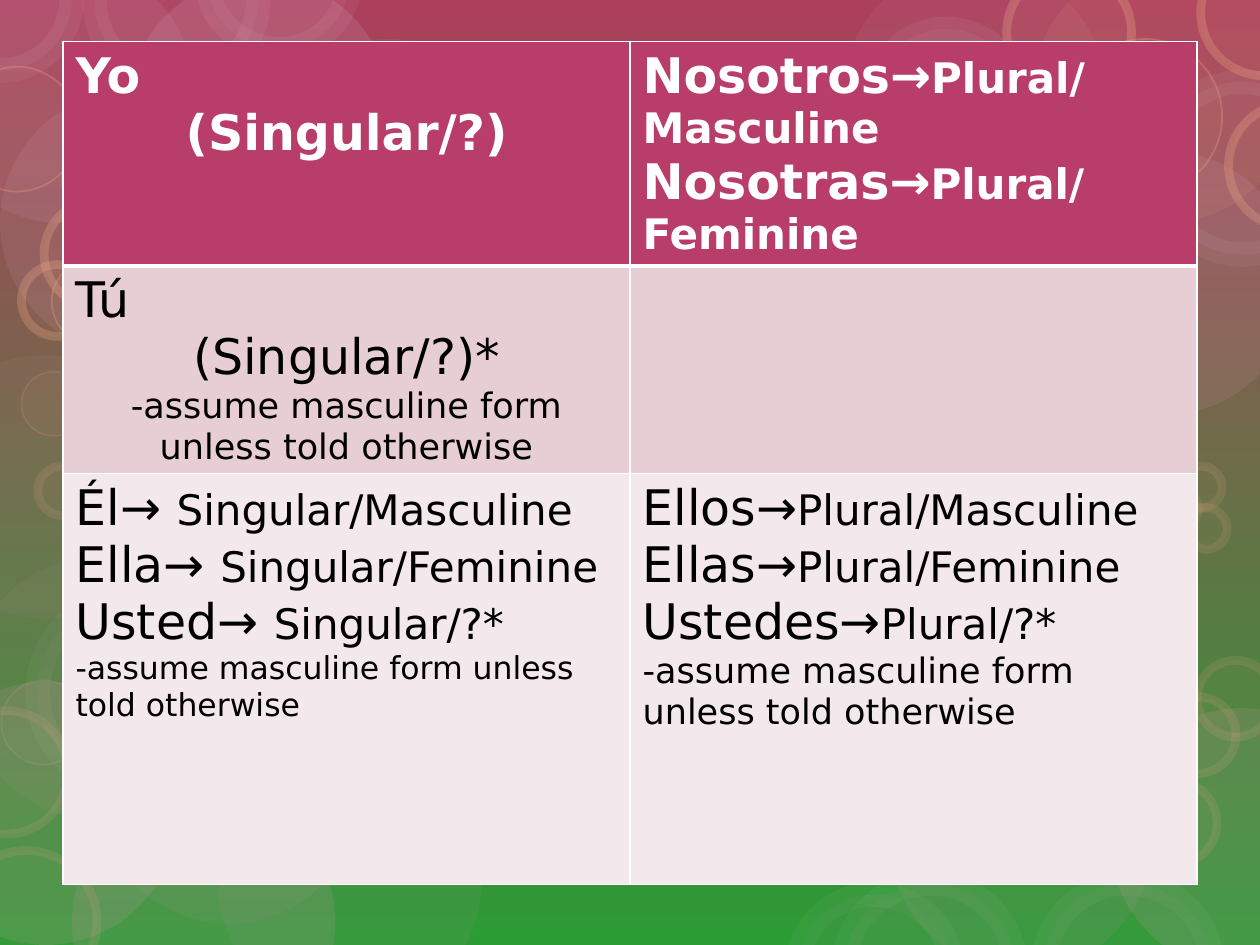
from lxml.etree import SubElement
from pptx import Presentation
from pptx.dml.color import RGBColor
from pptx.enum.shapes import MSO_SHAPE
from pptx.enum.text import PP_ALIGN
from pptx.oxml.ns import qn
from pptx.util import Inches, Pt

COLORS = {
    "sky": "AC3F5C", "ground": "2B9B34", "rose": "CF96B0", "peach": "EBA786",
    "pale": "F8F1F4", "header": "B83D68", "band": "E6CED4", "light": "F3E8EB",
    "white": "FFFFFF", "black": "000000",
}
SLIDE_W, SLIDE_H = 10, 7.5
BIG = 2.09

# Bubbles: fill, fill opacity, outline (colour, points, opacity), then
# circles as left, top, diameter; some run over the slide edge
BUBBLES = [
    ("rose", 8, None, [(-0.26, 4.42, BIG), (0.77, 5.24, BIG), (1.73, 5.96, BIG), (-0.69, 2.82, BIG)]),
    ("rose", 10, None, [(0.57, 1.2, BIG), (2.05, 0.31, BIG), (6.69, -0.29, BIG), (7.06, 5.62, BIG),
                        (6.75, 2.62, 1.33)]),
    ("rose", 16, None, [(0.57, 6.27, BIG), (8.81, 5.62, BIG), (-0.68, 5.41, BIG)]),
    ("rose", 14, None, [(-0.55, -0.32, BIG)]),
    ("rose", 20, None, [(1.01, -0.18, BIG)]),
    ("rose", 15, None, [(0, 0.72, BIG), (8.2, 1.2, BIG), (6.69, 0.86, BIG)]),
    ("rose", 5, None, [(7.29, 4.77, BIG)]),
    ("peach", 10, None, [(8.2, -0.32, BIG)]),
    ("rose", 10, ("pale", 14, 6), [
        (9.18, 0.65, 1.37), (6.94, 0.23, 1.14), (7.52, 1.59, 1.33), (7.89, 2.24, 1.14),
        (8.47, 2.91, 0.79), (0.75, -0.65, 1.3), (1.64, -0.75, 1.14), (-0.57, -0.58, 1.14)]),
    ("rose", 6, ("pale", 14, 4), [
        (0.3, 4.73, 1.53), (6.32, 7.1, 1.24), (6.7, 7.01, 1.36), (8.28, 7.01, 1.34)]),
    ("peach", 5, ("peach", 1, 15), [
        (0.01, 5.4, 0.67), (8.34, 6.14, 0.81), (8.2, 5.39, 0.81), (0.17, 2.95, 0.51),
        (0.52, 3.46, 0.5)]),
    ("peach", 5, ("peach", 5, 15), [
        (-0.36, 6.75, 1.13), (-0.44, 5.64, 0.98), (7.63, 5.73, 0.81), (9, 6.2, 0.66),
        (8.83, 4.48, 0.61), (9.2, 5.53, 0.61), (9.5, 5.24, 0.61), (9.37, 3.7, 0.33),
        (9.18, 3.87, 0.33), (9.41, 4.03, 0.33), (0.3, 3.7, 0.39)]),
    ("peach", 5, ("peach", 1, 30), [
        (-0.36, 0.53, 0.99), (0.41, 2.06, 0.67), (8.47, 0.31, 1.23), (8.17, 1.45, 0.67)]),
    ("peach", 5, ("peach", 5, 30), [
        (0.52, 0.92, 1), (0.35, 1.59, 0.85), (0.17, 2.1, 0.57), (7.99, -0.24, 0.99),
        (9.53, -0.4, 1), (9.75, 0.82, 0.99), (8.3, 0.8, 1.06)]),
]

# Pronouns: each cell is a list of (alignment, [(text, points), ...])
LEFT, CENTER = PP_ALIGN.LEFT, PP_ALIGN.CENTER
NOTE = "-assume masculine form unless told otherwise"


def entry(pronoun, meaning):
    return LEFT, [(pronoun, 28), (meaning, 24)]


PRONOUNS = [
    [[(LEFT, [("Yo", 28)]), (CENTER, [("(Singular/?)", 28)])],
     [entry("Nosotros→", "Plural/Masculine"), entry("Nosotras→", "Plural/Feminine")]],
    [[(LEFT, [("Tú", 28)]), (CENTER, [("(Singular/?)*", 28)]), (CENTER, [(NOTE, 20)])],
     []],
    [[entry("Él→ ", "Singular/Masculine"), entry("Ella→ ", "Singular/Feminine"),
      entry("Usted→ ", "Singular/?*"), (LEFT, [(NOTE, 18)])],
     [entry("Ellos→", "Plural/Masculine"), entry("Ellas→", "Plural/Feminine"),
      entry("Ustedes→", "Plural/?*"), (LEFT, [(NOTE, 20)])]],
]
# Rows: height, fill, text colour, bold, top and bottom border in points
ROWS = [
    (1.78, "header", "white", True, 1, 3),
    (1.65, "band", "black", False, 3, 1),
    (3.26, "light", "black", False, 1, 1),
]
COLUMN_W = 4.5


def rgb(name):
    return RGBColor.from_string(COLORS[name])


def add_bubble(slide, circle, fill, opacity, outline):
    left, top, size = map(Inches, circle)
    bubble = slide.shapes.add_shape(MSO_SHAPE.OVAL, left, top, size, size)
    bubble.shadow.inherit = False
    bubble.fill.solid()
    bubble.fill.fore_color.rgb = rgb(fill)
    opacities = [opacity]
    if outline:
        color, width, line_opacity = outline
        bubble.line.color.rgb = rgb(color)
        bubble.line.width = Pt(width)
        opacities.append(line_opacity)
    else:
        bubble.line.fill.background()
    tints = bubble._element.spPr.iter(qn("a:srgbClr"))
    for tint, percent in zip(list(tints), opacities):
        SubElement(tint, qn("a:alpha"), val=str(percent * 1000))


def add_borders(cell, widths):
    properties = cell._tc.get_or_add_tcPr()
    for side, width in widths.items():
        border = SubElement(properties, qn(f"a:{side}"), w=str(Pt(width)))
        paint = SubElement(border, qn("a:solidFill"))
        SubElement(paint, qn("a:srgbClr"), val=COLORS["white"])


def write_cell(cell, paragraphs, color, bold):
    frame = cell.text_frame
    for index, (alignment, runs) in enumerate(paragraphs):
        paragraph = frame.add_paragraph() if index else frame.paragraphs[0]
        paragraph.alignment = alignment
        for text, size in runs:
            run = paragraph.add_run()
            run.text = text
            run.font.color.rgb = rgb(color)
            style = {"name": "DejaVu Sans", "size": Pt(size), "bold": bold}
            for attribute, value in style.items():
                setattr(run.font, attribute, value)


def add_pronoun_table(slide):
    height = sum(row[0] for row in ROWS)
    table = slide.shapes.add_table(
        len(ROWS), 2, Inches(0.5), Inches(0.33), Inches(2 * COLUMN_W), Inches(height)).table
    table.horz_banding = False
    for column in table.columns:
        column.width = Inches(COLUMN_W)
    for r, (row_height, fill, color, bold, above, below) in enumerate(ROWS):
        table.rows[r].height = Inches(row_height)
        for c, paragraphs in enumerate(PRONOUNS[r]):
            cell = table.cell(r, c)
            add_borders(cell, {"lnL": 1, "lnR": 1, "lnT": above, "lnB": below})
            cell.fill.solid()
            cell.fill.fore_color.rgb = rgb(fill)
            write_cell(cell, paragraphs, color, bold)


def main():
    deck = Presentation()
    deck.slide_width, deck.slide_height = Inches(SLIDE_W), Inches(SLIDE_H)
    slide = deck.slides.add_slide(deck.slide_layouts[6])

    # Background, top to bottom
    backdrop = slide.background.fill
    backdrop.gradient()
    backdrop.gradient_angle = 270
    for stop, name, position in zip(backdrop.gradient_stops, ("sky", "ground"), (0, 1)):
        stop.color.rgb = rgb(name)
        stop.position = position

    # Bubbles behind the table
    for fill, opacity, outline, circles in BUBBLES:
        for circle in circles:
            add_bubble(slide, circle, fill, opacity, outline)

    add_pronoun_table(slide)
    deck.save("out.pptx")


if __name__ == "__main__":
    main()
